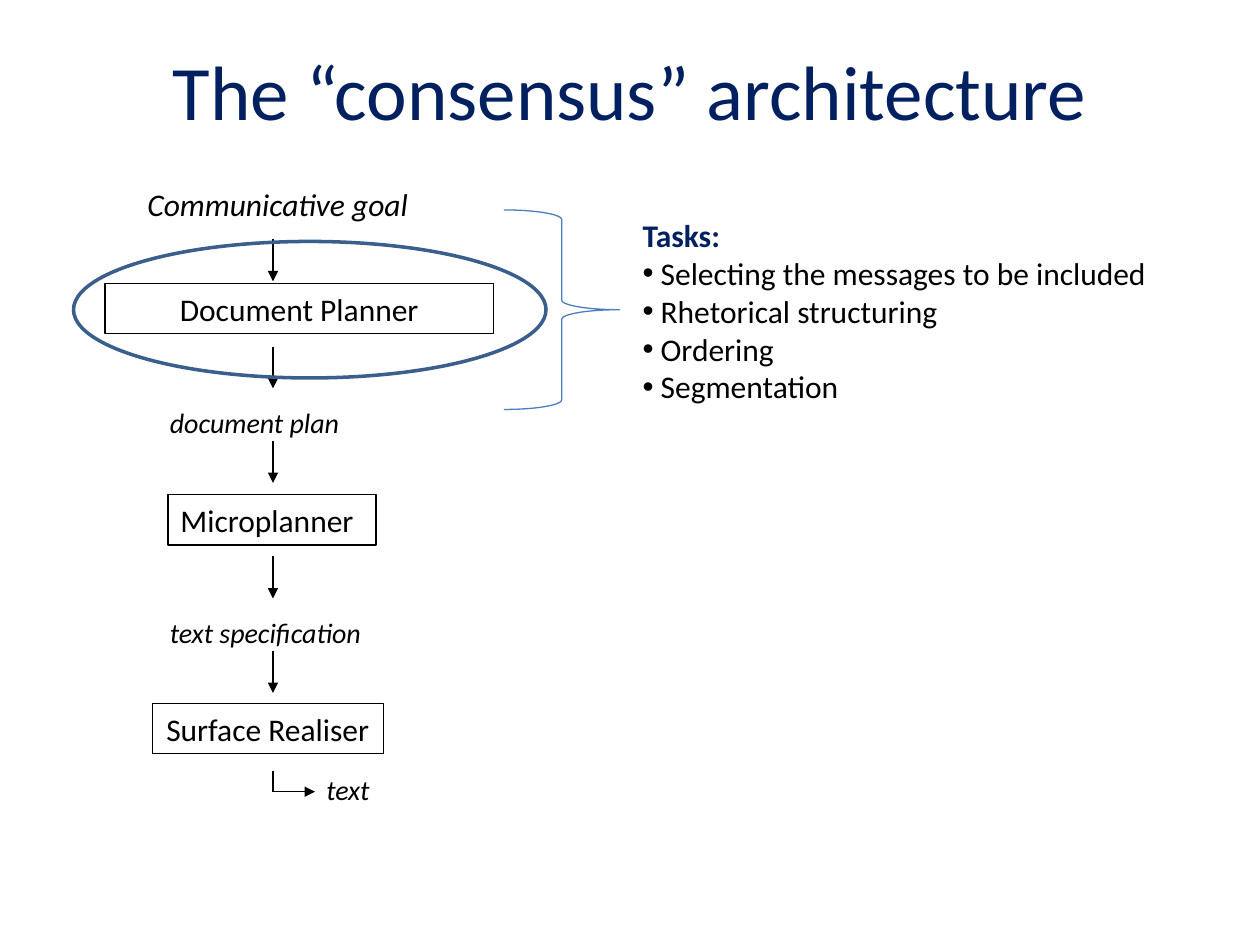
from lxml import etree
from pptx import Presentation
from pptx.dml.color import RGBColor
from pptx.enum.shapes import MSO_CONNECTOR, MSO_SHAPE
from pptx.enum.text import MSO_ANCHOR, MSO_AUTO_SIZE, PP_ALIGN
from pptx.oxml.ns import qn
from pptx.util import Pt

PX = 7620  # EMU per px, 120 px to the inch
BLACK = RGBColor(0x00, 0x00, 0x00)
NAVY = RGBColor(0x00, 0x20, 0x60)
BRACE_BLUE = RGBColor(0x4B, 0x7E, 0xBC)
RING_BLUE = RGBColor(0x3A, 0x5F, 0x8C)
STRAIGHT = MSO_CONNECTOR.STRAIGHT
RECTANGLE, OVAL, RIGHT_BRACE = MSO_SHAPE.RECTANGLE, MSO_SHAPE.OVAL, MSO_SHAPE.RIGHT_BRACE
LEFT, CENTER = PP_ALIGN.LEFT, PP_ALIGN.CENTER
TOP, MIDDLE = MSO_ANCHOR.TOP, MSO_ANCHOR.MIDDLE
NO_AUTOFIT = MSO_AUTO_SIZE.NONE


def write(frame, lines, size, color, align, anchor=TOP, wrap=False, **font_format):
    frame.word_wrap = wrap
    frame.auto_size = NO_AUTOFIT
    frame.vertical_anchor = anchor
    frame.text = "\n".join(lines)
    font_values = {"name": "Calibri", "size": Pt(size), **font_format}
    for paragraph in frame.paragraphs:
        paragraph.alignment = align
        paragraph.space_before = Pt(0)
        font = paragraph.runs[0].font
        font.color.rgb = color
        for attribute, value in font_values.items():
            setattr(font, attribute, value)


def add_outline(preset, box, color, width):
    """Add an unfilled shape with a coloured outline."""
    outline = slide.shapes.add_shape(preset, *[n * PX for n in box])
    outline.shadow.inherit = False
    outline.fill.background()
    outline.line.color.rgb = color
    outline.line.width = Pt(width)
    return outline


prs = Presentation()
prs.slide_width, prs.slide_height = 1200 * PX, 900 * PX
slide = prs.slides.add_slide(prs.slide_layouts[1])
title, tasks = slide.placeholders

# Title and task list
for placeholder, box in ((title, (60, 10, 1080, 150)), (tasks, (600, 200, 510, 194))):
    placeholder.left, placeholder.top, placeholder.width, placeholder.height = [n * PX for n in box]

write(title.text_frame, ["The “consensus” architecture"], 44, NAVY, CENTER, MIDDLE, True)
write(tasks.text_frame, [
    "Tasks:",
    " Selecting the messages to be included",
    " Rhetorical structuring",
    " Ordering",
    " Segmentation",
], 18, BLACK, LEFT)

for index, paragraph in enumerate(tasks.text_frame.paragraphs):
    properties = paragraph._p.get_or_add_pPr()
    properties.set("marL", "0")
    properties.set("indent", "0")
    if index == 0:
        etree.SubElement(properties, qn("a:buNone"))
    else:
        etree.SubElement(properties, qn("a:buFont")).set("typeface", "Arial")
        etree.SubElement(properties, qn("a:buChar")).set("char", "•")

heading_font = tasks.text_frame.paragraphs[0].runs[0].font
heading_font.bold = True
heading_font.color.rgb = NAVY

# Pipeline modules
for name, box, align, wrap in (
    ("Document Planner", (100, 270, 370, 48), CENTER, True),
    ("Microplanner", (160, 471, 198, 48), LEFT, False),
    ("Surface Realiser", (145, 670, 220, 48), CENTER, False),
):
    module = add_outline(RECTANGLE, box, BLACK, 0.75)
    write(module.text_frame, [name], 18, BLACK, align, wrap=wrap)

# Data passed between the modules
for name, box, size, align in (
    ("Communicative goal", (127, 170, 275, 48), 18, CENTER),
    ("document plan", (150, 380, 223, 44), 16, LEFT),
    ("text specification", (150, 580, 251, 44), 16, LEFT),
    ("text", (299, 730, 77, 44), 16, LEFT),
):
    label = slide.shapes.add_textbox(*[n * PX for n in box])
    write(label.text_frame, [name], size, BLACK, align, italic=True)

# Flow down the pipeline, then a turn to the final text
FLOW_X, ARROW_LENGTH = 260, 40
flow = [(FLOW_X, y, FLOW_X, y + ARROW_LENGTH, True) for y in (228, 330, 420, 530, 620)]
flow += [(FLOW_X, 734, FLOW_X, 754, False), (FLOW_X, 754, FLOW_X + ARROW_LENGTH, 754, True)]
for *ends, has_head in flow:
    step = slide.shapes.add_connector(STRAIGHT, *[n * PX for n in ends])
    step.line.color.rgb = BLACK
    step.line.width = Pt(0.75)
    if has_head:
        etree.SubElement(step.line._get_or_add_ln(), qn("a:tailEnd")).set("type", "triangle")
    etree.SubElement(step._element.spPr, qn("a:effectLst"))

# Highlight of the planner and its link to the tasks
add_outline(RIGHT_BRACE, (480, 200, 110, 190), BRACE_BLUE, 0.75)
add_outline(OVAL, (70, 230, 450, 130), RING_BLUE, 2)

prs.save("out.pptx")
